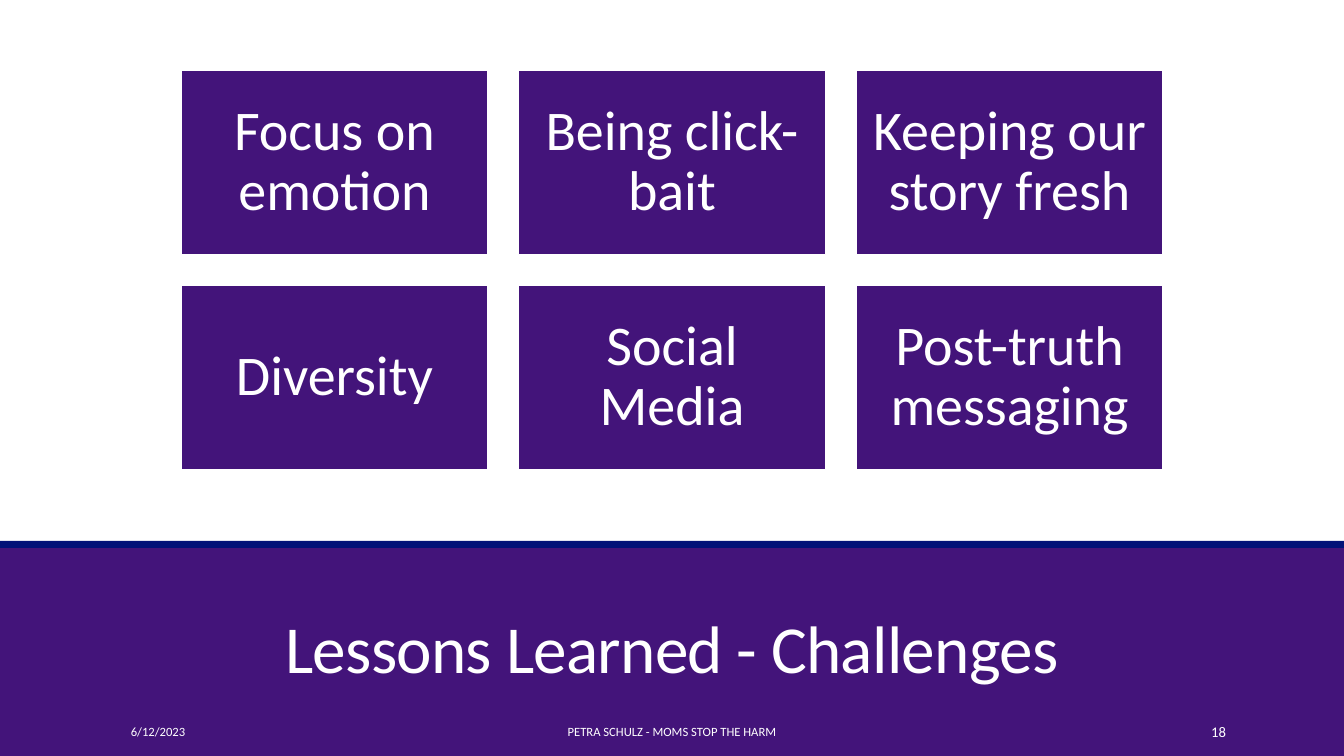
from dataclasses import dataclass

from pptx import Presentation
from pptx.dml.color import RGBColor
from pptx.enum.shapes import MSO_SHAPE
from pptx.enum.text import MSO_ANCHOR, MSO_AUTO_SIZE, PP_ALIGN
from pptx.util import Pt

RECT = MSO_SHAPE.RECTANGLE
MIDDLE, BOTTOM = MSO_ANCHOR.MIDDLE, MSO_ANCHOR.BOTTOM
LEFT, CENTER, RIGHT = PP_ALIGN.LEFT, PP_ALIGN.CENTER, PP_ALIGN.RIGHT
PURPLE = RGBColor(0x43, 0x14, 0x7A)
NAVY = RGBColor(0x01, 0x12, 0x78)
WHITE = RGBColor(0xFF, 0xFF, 0xFF)
FACE = "Calibri"
WIDTH, HEIGHT = 960, 540


@dataclass
class Box:
    left: float
    top: float
    width: float
    height: float

    def place(self) -> tuple:
        return Pt(self.left), Pt(self.top), Pt(self.width), Pt(self.height)


@dataclass
class Note:
    text: str
    left: float
    width: float
    align: PP_ALIGN
    size: float


def assign(target, values: dict) -> None:
    for name, value in values.items():
        setattr(target, name, value)


def write(shape, text: str, size: float, para: dict, frame: dict) -> None:
    body = shape.text_frame
    body.text = text
    assign(body, {"word_wrap": True, "auto_size": MSO_AUTO_SIZE.NONE} | frame)
    line = body.paragraphs[0]
    assign(line, para)
    font = line.runs[0].font
    assign(font, {"name": FACE, "size": Pt(size)})
    font.color.rgb = WHITE


def draw(slide, box: Box, fill: RGBColor):
    shape = slide.shapes.add_shape(RECT, *box.place())
    shape.shadow.inherit = False
    shape.fill.solid()
    shape.fill.fore_color.rgb = fill
    shape.line.fill.background()
    return shape


# Tile grid: three columns, gap of a tenth and height of 0.6 of the width
TILES = ["Focus on emotion", "Being click- bait", "Keeping our story fresh",
         "Diversity", "Social Media", "Post-truth messaging"]
COLS, TILE, TOP = 3, 219.2, 50.4
GAP, TALL = TILE * 0.1, TILE * 0.6
START = (WIDTH - COLS * TILE - (COLS - 1) * GAP) / 2
PADS = ("margin_left", "margin_top", "margin_right", "margin_bottom")
INSET = dict.fromkeys(PADS, Pt(12))

NOTES = [
    Note("6/12/2023", 86.4, 194.4, LEFT, 9),
    Note("PETRA SCHULZ - MOMS STOP THE HARM", 290.2, 379.4, CENTER, 9),
    Note("18", 779.8, 103, RIGHT, 10.5),
]


def add_tiles(slide) -> None:
    for i, text in enumerate(TILES):
        row, col = divmod(i, COLS)
        box = Box(START + col * (TILE + GAP), TOP + row * (TALL + GAP), TILE, TALL)
        tile = draw(slide, box, PURPLE)
        tile.line.color.rgb = WHITE
        tile.line.width = Pt(1.25)
        write(tile, text, 40, {"alignment": CENTER, "line_spacing": 0.9},
              {"vertical_anchor": MIDDLE} | INSET)


def add_notes(slide) -> None:
    for note in NOTES:
        box = Box(note.left, 508.3, note.width, 28.8)
        write(slide.shapes.add_textbox(*box.place()), note.text, note.size,
              {"alignment": note.align, "space_after": Pt(6)},
              {"vertical_anchor": MIDDLE})


def add_title(slide) -> None:
    title = slide.shapes.title
    assign(title, dict(zip(("left", "top", "width", "height"),
                           Box(84, 413.3, 792, 81.4).place())))
    write(title, "Lessons Learned - Challenges", 48,
          {"alignment": CENTER, "line_spacing": 0.85},
          {"vertical_anchor": BOTTOM})
    run = title.text_frame.paragraphs[0].runs[0]
    run.font._element.set("spc", "-50")


def main() -> None:
    deck = Presentation()
    deck.slide_width, deck.slide_height = Pt(WIDTH), Pt(HEIGHT)
    slide = deck.slides.add_slide(deck.slide_layouts[5])

    # Lower band and its edge, with the title in front
    band = draw(slide, Box(0, 390, WIDTH, 150), PURPLE)
    band.element.addnext(slide.shapes.title.element)
    draw(slide, Box(0, 386.4, WIDTH, 5), NAVY)

    # Text
    add_title(slide)
    add_notes(slide)
    add_tiles(slide)
    deck.save("out.pptx")


if __name__ == "__main__":
    main()
